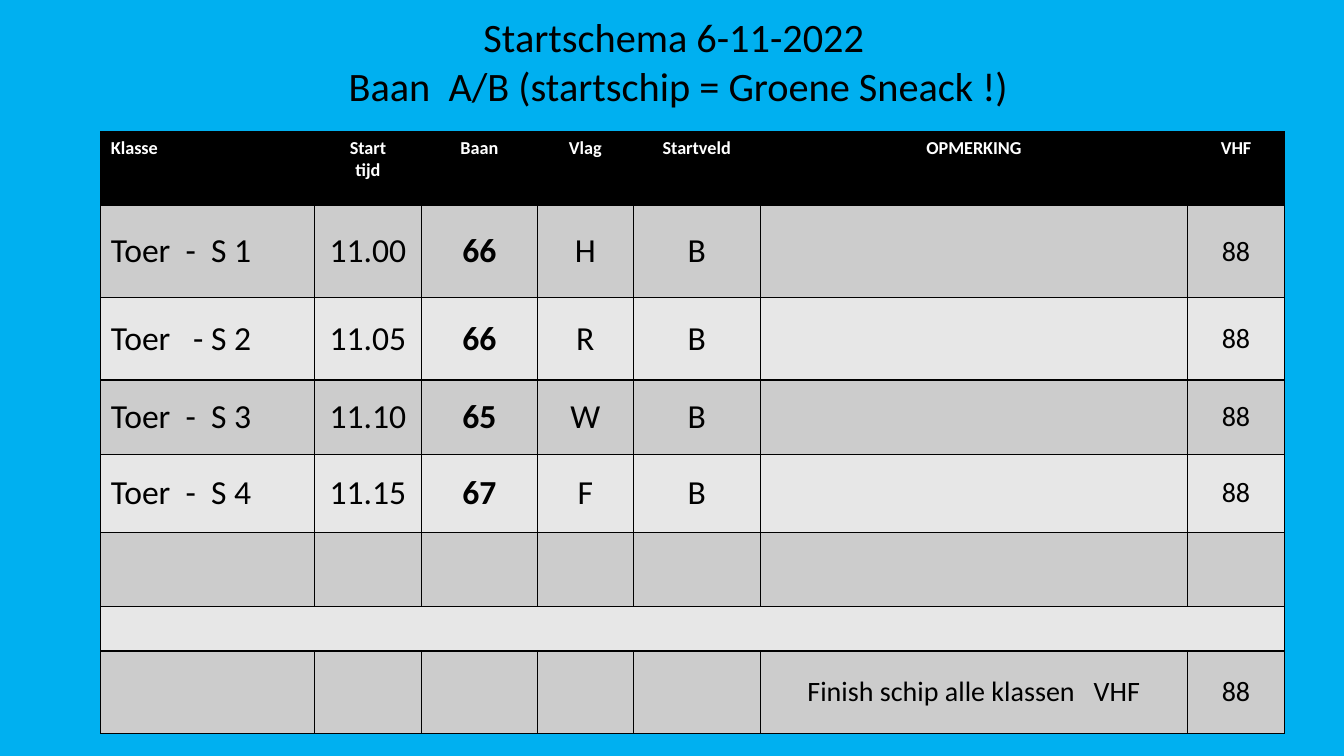
from dataclasses import dataclass

from lxml import etree
from pptx import Presentation
from pptx import util as u
from pptx.dml.color import RGBColor
from pptx.enum import text
from pptx.oxml import ns


@dataclass(frozen=True)
class Theme:
    """Colours, font and type sizes of the slide."""
    font: str = "Calibri"
    background: str = "00B0F0"
    ink: str = "000000"
    header_ink: str = "FFFFFF"
    bands: tuple = ("CCCCCC", "E7E7E7")
    title: float = 28.8
    header: float = 13
    body: float = 24
    small: float = 20
    border: float = 1


THEME = Theme()
COLUMNS = [2.12, 1.06, 1.15, 0.95, 1.26, 4.24, 0.96]
ROWS = [0.73, 0.91, 0.82, 0.74, 0.77, 0.74, 0.44, 0.82]
KLASSE, BAAN, OPMERKING, VHF = 0, 2, 5, 6
MERGED_ROW = 6
SCHEDULE = [
    ["Klasse", "Start\ntijd", "Baan", "Vlag", "Startveld", "OPMERKING", "VHF"],
    ["Toer  -  S 1", "11.00", "66", "H", "B", "", "88"],
    ["Toer   - S 2", "11.05", "66", "R", "B", "", "88"],
    ["Toer  -  S 3", "11.10", "65", "W", "B", "", "88"],
    ["Toer  -  S 4", "11.15", "67", "F", "B", "", "88"],
    [""] * 7,
    [""] * 7,
    [""] * 5 + ["Finish schip alle klassen   VHF", "88"],
]


def set_font(p, size, colour, bold=False):
    """Format the font of a whole paragraph."""
    p.font.name = THEME.font
    p.font.size = u.Pt(size)
    p.font.bold = bold
    p.font.color.rgb = RGBColor.from_string(colour)


def add_title(s, left, top, width, height):
    """Place the two-line heading in its box."""
    sp = s.shapes.title
    sp.left, sp.top, sp.width, sp.height = map(u.Inches, (left, top, width, height))
    tf = sp.text_frame
    tf.text = "Startschema 6-11-2022 \vBaan  A/B (startschip = Groene Sneack !)"
    tf.word_wrap = True
    tf.auto_size = text.MSO_AUTO_SIZE.NONE
    tf.vertical_anchor = text.MSO_ANCHOR.MIDDLE
    p = tf.paragraphs[0]
    p.alignment = text.PP_ALIGN.CENTER
    set_font(p, THEME.title, THEME.ink)


def set_borders(cell):
    """Draw a thin solid line on each side of a cell."""
    tc_pr = cell._tc.get_or_add_tcPr()
    for side in ("lnL", "lnR", "lnT", "lnB"):
        line = etree.SubElement(tc_pr, ns.qn(f"a:{side}"), w=str(u.Pt(THEME.border)))
        fill = etree.SubElement(line, ns.qn("a:solidFill"))
        etree.SubElement(fill, ns.qn("a:srgbClr"), val=THEME.ink)


def fill_cell(cell, row, column, value):
    """Format one cell by its row and column and write its value."""
    header = row == 0
    set_borders(cell)
    cell.fill.solid()
    colour = THEME.ink if header else THEME.bands[(row - 1) % 2]
    cell.fill.fore_color.rgb = RGBColor.from_string(colour)
    cell.vertical_anchor = text.MSO_ANCHOR.TOP if header else text.MSO_ANCHOR.MIDDLE
    if not value:
        return
    cell.text = value
    for p in cell.text_frame.paragraphs:
        p.alignment = text.PP_ALIGN.LEFT if column == KLASSE else text.PP_ALIGN.CENTER
        if header:
            set_font(p, THEME.header, THEME.header_ink, True)
        else:
            size = THEME.small if column in (OPMERKING, VHF) else THEME.body
            set_font(p, size, THEME.ink, column == BAAN)


def add_schedule(s, left, top, width, height):
    """Place the start schedule table in its box."""
    box = map(u.Inches, (left, top, width, height))
    table = s.shapes.add_table(len(ROWS), len(COLUMNS), *box).table
    for column, size in zip(table.columns, COLUMNS):
        column.width = u.Inches(size)
    for row, size in zip(table.rows, ROWS):
        row.height = u.Inches(size)
    for i, values in enumerate(SCHEDULE):
        for j, value in enumerate(values):
            fill_cell(table.cell(i, j), i, j, value)
    table.cell(MERGED_ROW, 0).merge(table.cell(MERGED_ROW, VHF))


def main():
    """Build the slide and save it."""
    prs = Presentation()
    prs.slide_width, prs.slide_height = u.Inches(13.33), u.Inches(7.5)
    s = prs.slides.add_slide(prs.slide_layouts[5])
    s.background.fill.solid()
    s.background.fill.fore_color.rgb = RGBColor.from_string(THEME.background)
    add_title(s, 2.23, 0.06, 9, 1.09)
    add_schedule(s, 1, 1.31, sum(COLUMNS), sum(ROWS))
    prs.save("out.pptx")


if __name__ == "__main__":
    main()
